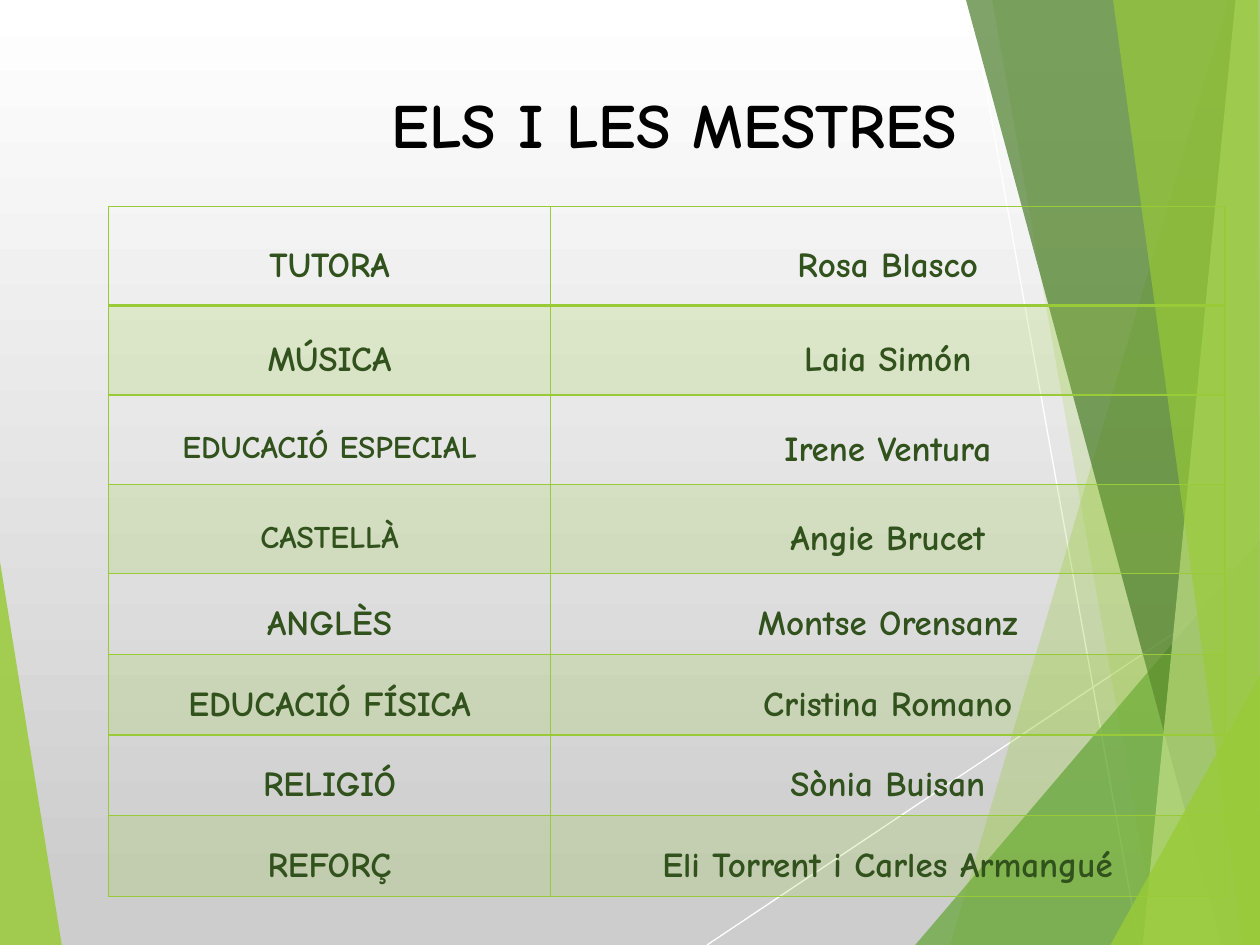
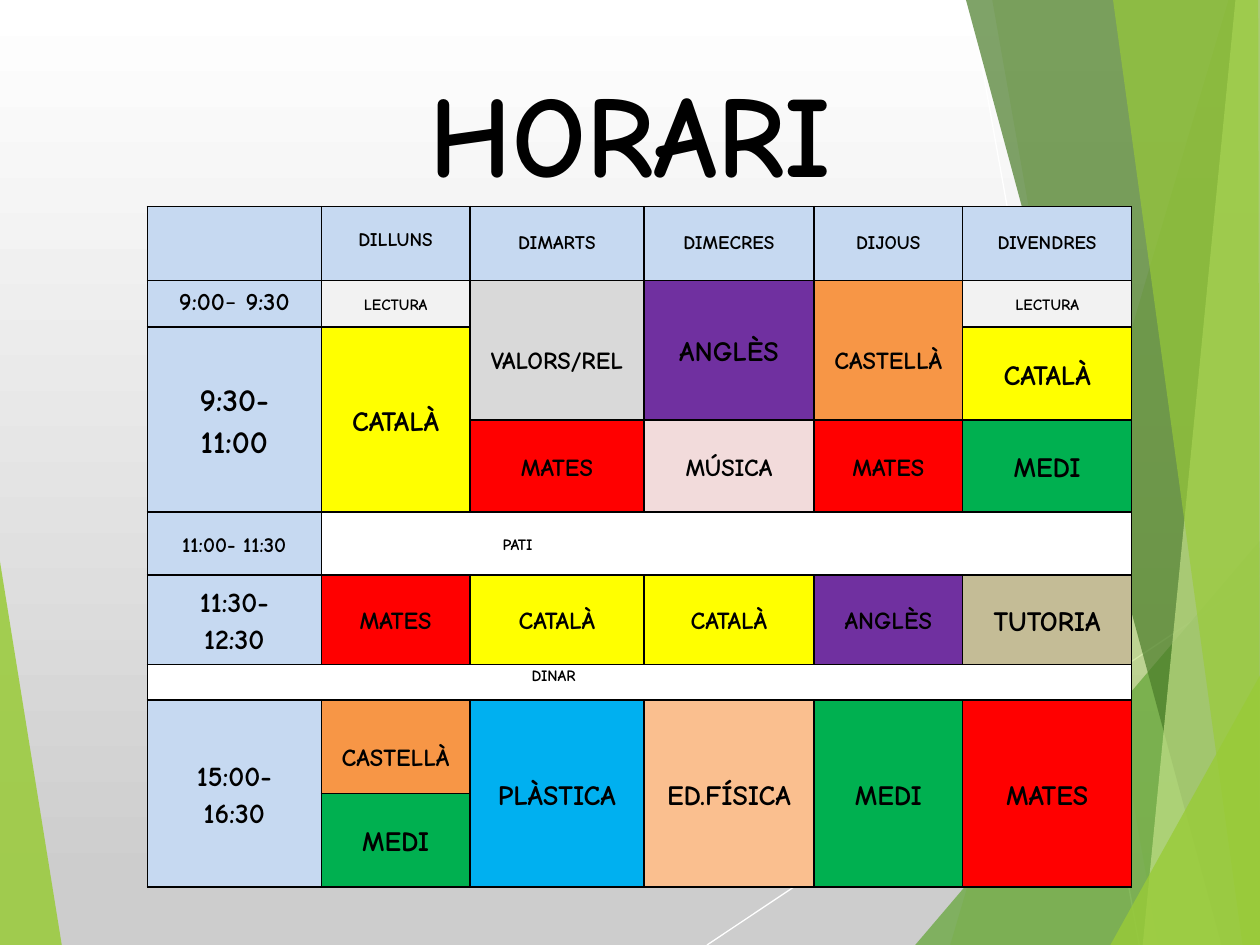
"""Build a class deck with a teacher list and a weekly timetable."""
import dataclasses

import lxml.etree
import pptx
import pptx.dml.color
import pptx.enum.shapes
import pptx.enum.text
import pptx.oxml.ns
import pptx.util

Pt = pptx.util.Pt
qn = pptx.oxml.ns.qn
Align = pptx.enum.text.PP_ALIGN
Anchor = pptx.enum.text.MSO_ANCHOR

SUBJECT_COLOURS = {
    "CATALÀ": "FFFF00", "MATES": "FF0000", "MEDI": "00B050", "ANGLÈS": "7030A0",
    "CASTELLÀ": "F79646", "LECTURA": "F2F2F2", "VALORS/REL": "D9D9D9",
    "MÚSICA": "F2DBDB", "TUTORIA": "C4BC96", "PLÀSTICA": "00B0F0",
    "ED.FÍSICA": "FABF8F", "PATI": "FFFFFF", "DINAR": "FFFFFF",
}


@dataclasses.dataclass(frozen=True)
class Theme:
    """Colours, font and type sizes of the deck."""
    font: str = "Comic Neue"
    black: str = "000000"
    white: str = "FFFFFF"
    silver: str = "CDCDCD"
    lime: str = "99CB38"
    pale_lime: str = "C2E088"
    leaf: str = "63A537"
    forest: str = "4A7C29"
    ink: str = "31521C"
    sky: str = "C6D9F1"
    subjects: dict = dataclasses.field(default_factory=lambda: SUBJECT_COLOURS)
    title: int = 36
    big_title: int = 66
    name: int = 20
    large: int = 18
    medium: int = 16
    normal: int = 14
    hour: int = 12
    day: int = 11
    small: int = 9


@dataclasses.dataclass(frozen=True)
class Slot:
    """One timetable cell, with the rows and columns it covers."""
    row: int
    column: int
    text: object
    size: int
    rows: int = 1
    columns: int = 1
    indent: float = 0
    layout: dict = dataclasses.field(default_factory=dict)


THEME = Theme()


def rgb(colour):
    """Turn a hex string into a colour."""
    return pptx.dml.color.RGBColor.from_string(colour)


def apply_format(target, values):
    """Set every attribute named in a dict."""
    for name, value in values.items():
        setattr(target, name, value)


def paint(fill, holder, colour, opacity=100):
    """Fill an element with a solid colour, see-through if asked."""
    fill.solid()
    fill.fore_color.rgb = rgb(colour)
    if opacity < 100:
        swatch = holder.find(qn("a:solidFill")).find(qn("a:srgbClr"))
        lxml.etree.SubElement(swatch, qn("a:alpha"), val=str(opacity * 1000))


def write_para(para, text, size, colour, spacing=1.0, indent=0):
    """Write a paragraph, centred unless indented, from a string or (text, size, bold) parts."""
    apply_format(para, {"alignment": Align.LEFT if indent else Align.CENTER,
                        "line_spacing": spacing})
    if indent:
        para._p.get_or_add_pPr().set("marL", str(Pt(indent)))
    parts = [(text, size, True)] if isinstance(text, str) else text
    for words, points, bold in parts:
        span = para.add_run()
        span.text = words
        apply_format(span.font, {"name": THEME.font, "size": Pt(points), "bold": bold})
        span.font.color.rgb = rgb(colour)


def add_facet(group, colour, opacity, points):
    """Draw one see-through polygon."""
    corners = [(Pt(x), Pt(y)) for x, y in points]
    outline = group.shapes.build_freeform(*corners[0])
    outline.add_line_segments(corners[1:], close=True)
    facet = outline.convert_to_shape()
    facet.shadow.inherit = False
    facet.line.fill.background()
    paint(facet.fill, facet.element.spPr, colour, opacity)


def add_ray(group, *ends):
    """Draw one thin white line."""
    ray = group.shapes.add_connector(
        pptx.enum.shapes.MSO_CONNECTOR.STRAIGHT, *[Pt(end) for end in ends])
    ray.line.color.rgb = rgb(THEME.white)
    ray.line.width = Pt(0.75)
    lxml.etree.SubElement(ray.element.spPr, qn("a:effectLst"))


def add_backdrop(deck, page):
    """Give the master its gradient and green facets, drawn by way of a page."""
    fill = deck.slide_master.background.fill
    fill.gradient()
    fill.gradient_angle = 270
    for stop, colour, position in zip(
            fill.gradient_stops, (THEME.white, THEME.silver), (0, 0.94)):
        stop.color.rgb = rgb(colour)
        stop.position = position
    group = page.shapes.add_group_shape()
    add_ray(group, 404, 540, 720, 329)
    add_ray(group, 554.4, 0, 651, 540)
    low, high = (720, 540), (720, 0)
    for colour, opacity, points in (
            (THEME.lime, 85, [(0, 321), (35.3, 540), (0, 540)]),
            (THEME.lime, 30, [(702, 0), (543, 540), low, high]),
            (THEME.lime, 20, [(567, 0), (662, 540), low, high]),
            (THEME.leaf, 72, [(523, 540), (720, 309), low]),
            (THEME.forest, 70, [(552, 0), (698, 540), low, high]),
            (THEME.pale_lime, 70, [(706, 0), (653, 540), low, high]),
            (THEME.lime, 65, [(636, 0), (710, 540), low, (719, 0)]),
            (THEME.lime, 80, [(634.5, 540), (720, 386), low])):
        add_facet(group, colour, opacity, points)
    for number, tag in enumerate(group.element.iter(qn("p:cNvPr")), 100):
        tag.set("id", str(number))
    deck.slide_master.shapes.element.insert(2, group.element)


def set_title(page, text, size, box, indent=7.2):
    """Place and format the title placeholder."""
    title = page.shapes.title
    apply_format(title, dict(zip(("left", "top", "width", "height"), map(Pt, box))))
    frame = title.text_frame
    apply_format(frame, {
        "word_wrap": True, "auto_size": pptx.enum.text.MSO_AUTO_SIZE.NONE,
        "vertical_anchor": Anchor.TOP, "margin_left": Pt(indent)})
    write_para(frame.paragraphs[0], text, size, THEME.black)


def set_borders(cell, colour, top=1, bottom=1):
    """Draw the four borders of a cell."""
    holder = cell._tc.get_or_add_tcPr()
    sides = (("a:lnL", 1), ("a:lnR", 1), ("a:lnT", top), ("a:lnB", bottom))
    for place, (side, width) in enumerate(sides):
        line = lxml.etree.Element(qn(side), w=str(Pt(width)))
        solid = lxml.etree.SubElement(line, qn("a:solidFill"))
        lxml.etree.SubElement(solid, qn("a:srgbClr"), val=colour)
        holder.insert(place, line)


def add_grid(page, left, top, widths, heights):
    """Add an unstyled table of the given column widths and row heights."""
    frame = page.shapes.add_table(
        len(heights), len(widths), Pt(left), Pt(top), Pt(sum(widths)), Pt(sum(heights)))
    grid = frame.table
    apply_format(grid, {"first_row": False, "horz_banding": False})
    for column, width in zip(grid.columns, widths):
        column.width = Pt(width)
    for row, height in zip(grid.rows, heights):
        row.height = Pt(height)
    return grid


def add_teachers(page):
    """Add the table of subjects and teachers."""
    teachers = (
        ("TUTORA", "Rosa Blasco", THEME.name),
        ("MÚSICA", "Laia Simón", THEME.name),
        ("EDUCACIÓ ESPECIAL", "Irene Ventura", THEME.large),
        ("CASTELLÀ", "Angie Brucet", THEME.large),
        ("ANGLÈS", "Montse Orensanz", THEME.name),
        ("EDUCACIÓ FÍSICA", "Cristina Romano", THEME.name),
        ("RELIGIÓ", "Sònia Buisan", THEME.name),
        ("REFORÇ", "Eli Torrent i Carles Armangué", THEME.name),
    )
    grid = add_grid(page, 62, 118, [252.7, 385.3], [56.6] + [51.1] * 3 + [46.1] * 4)
    for row, (subject, teacher, size) in enumerate(teachers):
        for column, (text, points) in enumerate(((subject, size), (teacher, THEME.name))):
            cell = grid.cell(row, column)
            cell.vertical_anchor = Anchor.MIDDLE
            if row % 2:
                paint(cell.fill, cell._tc.get_or_add_tcPr(), THEME.lime, 20)
            else:
                cell.fill.background()
            set_borders(cell, THEME.lime, 2 if row == 1 else 1, 2 if row == 0 else 1)
            write_para(cell.text_frame.paragraphs[0], text, points, THEME.ink, 1.5)


def timetable_slots():
    """List the cells of the week."""
    days = ("DILLUNS", "DIMARTS", "DIMECRES", "DIJOUS", "DIVENDRES")
    first_hour = [("9:00", THEME.normal, True), ("- ", THEME.medium, False),
                  ("9:30", THEME.normal, True)]
    lowered = {"margin_top": Pt(11)}
    raised = {"margin_bottom": Pt(5)}
    headings = [Slot(0, number, day, THEME.day,
                     layout={"margin_bottom": Pt(6 if number == 1 else 2)})
                for number, day in enumerate(days, 1)]
    midday = [Slot(5, number, subject, THEME.normal) for number, subject in
              enumerate(("MATES", "CATALÀ", "CATALÀ", "ANGLÈS"), 1)]
    afternoon = [Slot(7, number, subject, THEME.medium, rows=2) for number, subject in
                 enumerate(("PLÀSTICA", "ED.FÍSICA", "MEDI", "MATES"), 2)]
    return headings + midday + afternoon + [
        Slot(0, 0, "", THEME.day),
        Slot(1, 0, first_hour, THEME.normal, layout=raised),
        Slot(1, 1, "LECTURA", THEME.small),
        Slot(1, 2, "VALORS/REL", THEME.normal, rows=2, layout=lowered),
        Slot(1, 3, "ANGLÈS", THEME.medium, rows=2),
        Slot(1, 4, "CASTELLÀ", THEME.normal, rows=2, layout=lowered),
        Slot(1, 5, "LECTURA", THEME.small),
        Slot(2, 0, "9:30-\n11:00", THEME.large, rows=2),
        Slot(2, 1, "CATALÀ", THEME.medium, rows=2),
        Slot(2, 5, "CATALÀ", THEME.medium),
        Slot(3, 2, "MATES", THEME.normal),
        Slot(3, 3, "MÚSICA", THEME.normal),
        Slot(3, 4, "MATES", THEME.normal),
        Slot(3, 5, "MEDI", THEME.medium),
        Slot(4, 0, "11:00- 11:30", THEME.hour),
        Slot(4, 1, "PATI", THEME.small, columns=5, indent=100),
        Slot(5, 0, "11:30-\n12:30", THEME.medium),
        Slot(5, 5, "TUTORIA", THEME.medium),
        Slot(6, 0, "DINAR", THEME.small, columns=6, indent=216,
             layout={"vertical_anchor": Anchor.TOP}),
        Slot(7, 0, "15:00-\n16:30", THEME.medium, rows=2),
        Slot(7, 1, "CASTELLÀ", THEME.normal, layout=lowered),
        Slot(8, 1, "MEDI", THEME.medium),
    ]


def add_timetable(page):
    """Add the weekly timetable."""
    grid = add_grid(page, 84.2, 118, [99.4, 85, 99.4, 97.2, 85, 96.5],
                    [42.2, 26.6, 53.3, 52.6, 36, 51.1, 20.2, 53.5, 53.5])
    for cell in grid.iter_cells():
        set_borders(cell, THEME.black)
        apply_format(cell, {
            "margin_left": Pt(3.6), "margin_right": Pt(3.6), "margin_top": 0,
            "margin_bottom": 0, "vertical_anchor": Anchor.MIDDLE})
    for slot in timetable_slots():
        cell = grid.cell(slot.row, slot.column)
        if slot.rows * slot.columns > 1:
            cell.merge(grid.cell(slot.row + slot.rows - 1, slot.column + slot.columns - 1))
        apply_format(cell, slot.layout)
        lines = slot.text.split("\n") if isinstance(slot.text, str) else [slot.text]
        colour = THEME.sky
        if isinstance(slot.text, str):
            colour = THEME.subjects.get(slot.text, THEME.sky)
        paint(cell.fill, cell._tc.get_or_add_tcPr(), colour)
        frame = cell.text_frame
        for number, line in enumerate(lines):
            para = frame.add_paragraph() if number else frame.paragraphs[0]
            if line:
                write_para(para, line, slot.size, THEME.black, 1.15, slot.indent)


def main():
    """Build and save the deck."""
    deck = pptx.Presentation()
    apply_format(deck, {"slide_width": Pt(720), "slide_height": Pt(540)})
    title_only = deck.slide_layouts[5]

    page = deck.slides.add_slide(title_only)
    add_backdrop(deck, page)
    add_teachers(page)
    set_title(page, "ELS I LES MESTRES", THEME.title, (62, 45, 556, 103.7), 98)

    page = deck.slides.add_slide(title_only)
    set_title(page, "HORARI", THEME.big_title, (110.5, 32, 499.7, 75))
    add_timetable(page)

    deck.save("out.pptx")


if __name__ == "__main__":
    main()
